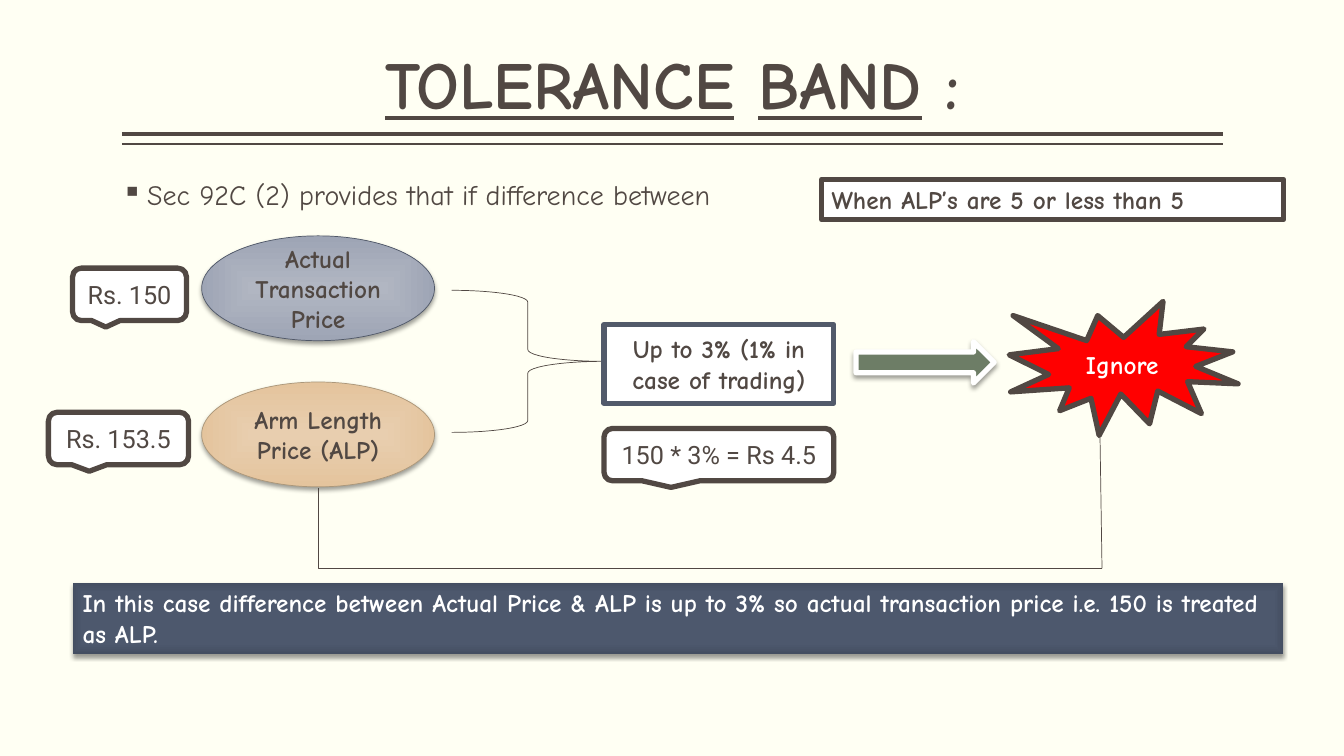
from lxml import etree
from pptx import Presentation
from pptx.dml.color import RGBColor
from pptx.enum import shapes, text
from pptx.oxml import ns
from pptx.util import Inches, Pt

SHAPE = shapes.MSO_SHAPE
CONNECTOR = shapes.MSO_CONNECTOR
CENTER = text.PP_ALIGN.CENTER
MIDDLE = text.MSO_ANCHOR.MIDDLE

IVORY = RGBColor(0xFF, 0xFF, 0xF3)
BROWN = RGBColor(0x51, 0x48, 0x43)
WHITE = RGBColor(0xFF, 0xFF, 0xFF)
RED = RGBColor(0xFF, 0x00, 0x00)
GREEN = RGBColor(0x6D, 0x7D, 0x66)
SLATE = RGBColor(0x52, 0x5A, 0x6A)
GREY_EDGE = RGBColor(0x50, 0x58, 0x68)
TAN_EDGE = RGBColor(0xAB, 0x97, 0x7A)
# Gradient stops: position in percent, colour
GREY_BLEND = [(0, RGBColor(0xB1, 0xB6, 0xC2)), (100, RGBColor(0x9E, 0xA5, 0xB5))]
TAN_BLEND = [(0, RGBColor(0xE8, 0xCE, 0xAF)), (100, RGBColor(0xE4, 0xC4, 0x9D))]
NAVY_BLEND = [(0, RGBColor(0x4E, 0x59, 0x6E)), (71, RGBColor(0x4D, 0x58, 0x6D)),
              (100, RGBColor(0x44, 0x4E, 0x61))]

HAND_FONT = "Comic Neue"
PLAIN_FONT = "Roboto"
HEAVY = 3.78
THIN = 0.5


def add_child(parent, tag, **attributes):
    return etree.SubElement(parent, ns.qn(tag), attributes)


def set_font(font, size, color=BROWN, name=HAND_FONT, bold=False):
    font.name, font.size, font.bold = name, Pt(size), bold
    font.color.rgb = color


def set_gradient(shape, stops):
    """Blend from the centre of the shape to its edges."""
    shape.fill.solid()
    solid = shape._element.spPr.find(ns.qn("a:solidFill"))
    gradient = etree.Element(ns.qn("a:gradFill"), rotWithShape="1")
    stop_list = add_child(gradient, "a:gsLst")
    for position, color in stops:
        stop = add_child(stop_list, "a:gs", pos=str(position * 1000))
        add_child(stop, "a:srgbClr", val=str(color))
    blend = add_child(gradient, "a:path", path="rect")
    add_child(blend, "a:fillToRect", l="50000", t="50000", r="50000", b="50000")
    solid.getparent().replace(solid, gradient)


def add_shadow(shape, blur):
    effects = shape._element.spPr.find(ns.qn("a:effectLst"))
    shadow = add_child(effects, "a:outerShdw", blurRad=str(Pt(blur)), dist=str(Pt(2)),
                       dir="5400000", algn="ctr", rotWithShape="0")
    color = add_child(shadow, "a:srgbClr", val="000000")
    add_child(color, "a:alpha", val="38000")


def add_figure(slide, kind, box, fill=None, line=None, width=HEAVY, shadow_blur=None):
    """fill is a colour, a list of gradient stops, or None."""
    shape = slide.shapes.add_shape(kind, *map(Inches, box))
    shape.shadow.inherit = False
    if fill is None:
        shape.fill.background()
    elif isinstance(fill, list):
        set_gradient(shape, fill)
    else:
        shape.fill.solid()
        shape.fill.fore_color.rgb = fill
    if line is None:
        shape.line.fill.background()
    else:
        shape.line.color.rgb = line
        shape.line.width = Pt(width)
    if shadow_blur:
        add_shadow(shape, shadow_blur)
    return shape


def write_label(shape, words, color=BROWN, name=HAND_FONT, bold=True):
    frame = shape.text_frame
    frame.word_wrap = True
    frame.vertical_anchor = MIDDLE
    paragraph = frame.paragraphs[0]
    paragraph.text = words
    paragraph.alignment = CENTER
    set_font(paragraph.font, 18, color, name, bold)


def write_note(shape, words, color):
    """Left-aligned text in a box that grows with it."""
    write_label(shape, words, color)
    frame = shape.text_frame
    frame.vertical_anchor = text.MSO_ANCHOR.TOP
    frame.auto_size = text.MSO_AUTO_SIZE.SHAPE_TO_FIT_TEXT
    frame.paragraphs[0].alignment = text.PP_ALIGN.LEFT


def add_callout(slide, box, words):
    shape = add_figure(slide, SHAPE.ROUNDED_RECTANGULAR_CALLOUT, box, WHITE, BROWN)
    write_label(shape, words, name=PLAIN_FONT, bold=False)


def add_line(slide, start, end, width=THIN, kind=CONNECTOR.STRAIGHT):
    line = slide.shapes.add_connector(kind, *map(Inches, start + end))
    line.line.color.rgb = BROWN
    line.line.width = Pt(width)
    add_child(line._element.spPr, "a:effectLst")
    return line


def add_text_box(slide, box):
    frame = slide.shapes.add_textbox(*map(Inches, box)).text_frame
    frame.word_wrap = True
    frame.margin_left = frame.margin_right = 0
    paragraph = frame.paragraphs[0]
    paragraph.line_spacing = 0.9
    return frame, paragraph


def add_title(slide):
    frame, paragraph = add_text_box(slide, (1.21, 0.08, 10.92, 1.2))
    frame.vertical_anchor = text.MSO_ANCHOR.BOTTOM
    paragraph.alignment = CENTER
    set_font(paragraph.font, 48, bold=True)
    for words in (" ", "TOLERANCE", " ", "BAND", " : "):
        run = paragraph.add_run()
        run.text = words
        run.font.underline = words.isalpha()


def add_bullet(slide):
    _, paragraph = add_text_box(slide, (1.21, 1.75, 10.92, 5))
    paragraph.text = "Sec 92C (2) provides that if difference between"
    paragraph.space_before = Pt(18)
    set_font(paragraph.font, 20)
    properties = paragraph._p.get_or_add_pPr()
    properties.set("marL", str(Inches(0.25)))
    properties.set("indent", str(-Inches(0.25)))
    bullet = etree.Element(ns.qn("a:buChar"), char="▪")
    properties.find(ns.qn("a:defRPr")).addprevious(bullet)


def main():
    presentation = Presentation()
    presentation.slide_width, presentation.slide_height = Inches(13.33), Inches(7.5)
    slide = presentation.slides.add_slide(presentation.slide_layouts[6])
    slide.background.fill.solid()
    slide.background.fill.fore_color.rgb = IVORY

    # Title with its double rule, and the opening bullet
    for y, width in ((1.33, 3), (1.43, 1)):
        add_line(slide, (1.21, y), (12.13, y), width)
    add_title(slide)
    add_bullet(slide)

    # The two prices being compared
    for top, blend, edge, words in (
            (2.34, GREY_BLEND, GREY_EDGE, "Actual Transaction Price"),
            (3.79, TAN_BLEND, TAN_EDGE, "Arm Length Price (ALP)")):
        price = add_figure(slide, SHAPE.OVAL, (2, top, 2.31, 1.04), blend, edge, THIN, 3.5)
        write_label(price, words)

    # Brace, limit, arrow and result
    add_figure(slide, SHAPE.RIGHT_BRACE, (4.48, 2.88, 1.51, 1.41), None, BROWN, THIN)
    limit = add_figure(slide, SHAPE.RECTANGLE, (5.99, 3.22, 2.28, 0.78), WHITE, SLATE)
    write_label(limit, "Up to 3% (1% in case of trading)")
    add_figure(slide, SHAPE.RIGHT_ARROW, (8.49, 3.39, 1.37, 0.41), GREEN, WHITE, HEAVY, 3.5)
    result = add_figure(slide, SHAPE.EXPLOSION1, (10.01, 2.99, 2.27, 1.33), RED, BROWN)
    write_label(result, "Ignore", WHITE)

    # Worked example
    add_callout(slide, (0.72, 2.66, 1.13, 0.52), "Rs. 150")
    add_callout(slide, (0.48, 4.09, 1.39, 0.52), "Rs. 153.5")
    add_callout(slide, (5.99, 4.25, 2.28, 0.52), "150 * 3% = Rs 4.5")

    # Lines joining the arm's length price to the result
    elbow = add_line(slide, (10.93, 5.64), (3.16, 4.84), kind=CONNECTOR.ELBOW)
    elbow._element.spPr.find(ns.qn("a:prstGeom")).set("prst", "bentConnector2")
    add_line(slide, (10.91, 4.32), (10.93, 5.64))

    # Conclusion and condition
    conclusion = add_figure(slide, SHAPE.RECTANGLE, (0.72, 5.78, 12.01, 0.71),
                            NAVY_BLEND, shadow_blur=3.1)
    write_note(conclusion, "In this case difference between Actual Price & ALP is up to 3% "
               "so actual transaction price i.e. 150 is treated as ALP.", WHITE)
    condition = add_figure(slide, SHAPE.RECTANGLE, (8.15, 1.78, 4.58, 0.4), WHITE, BROWN)
    write_note(condition, "When ALP’s are 5 or less than 5", BROWN)

    presentation.save("out.pptx")


if __name__ == "__main__":
    main()
